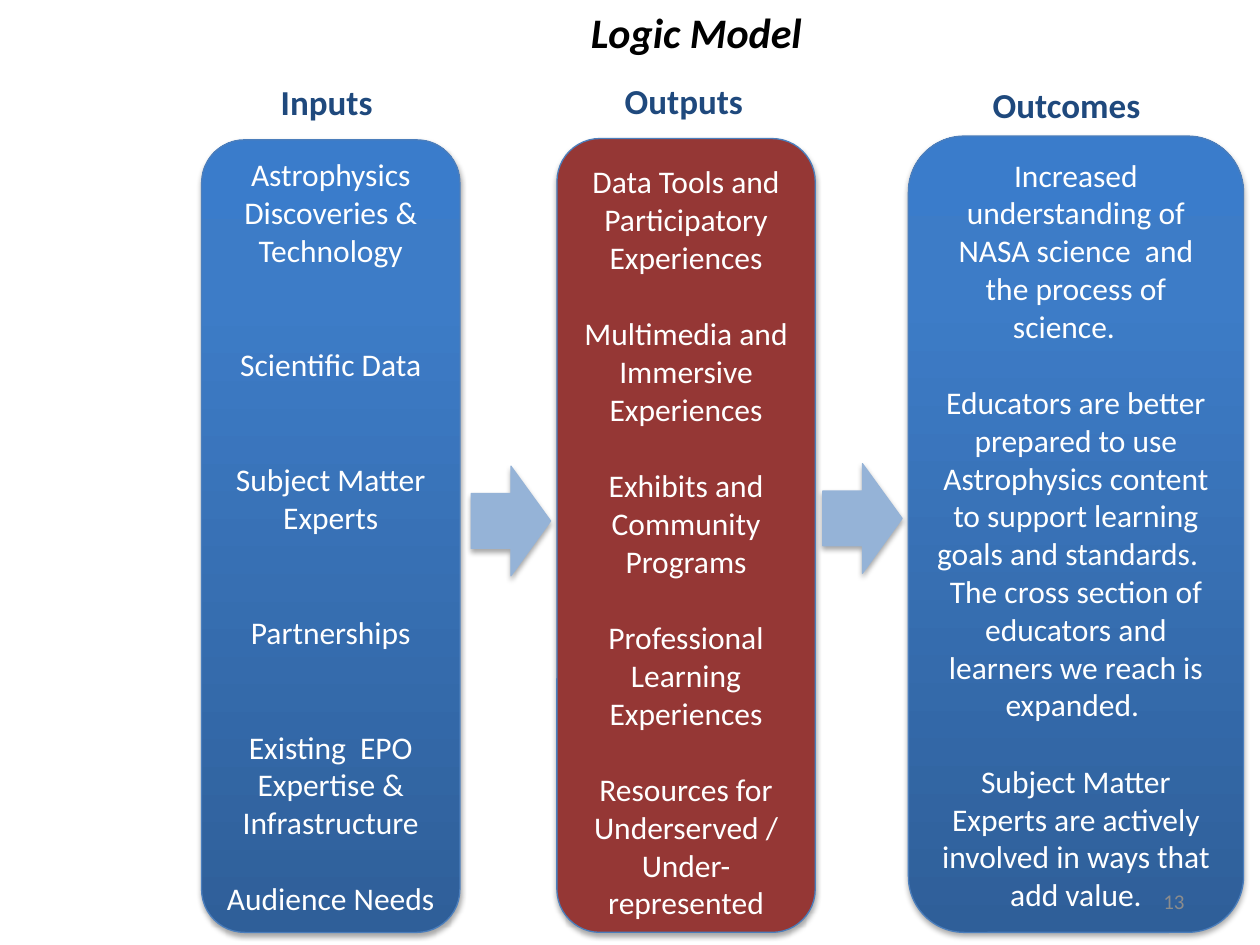
from copy import deepcopy
from dataclasses import dataclass

from lxml.etree import SubElement
from pptx import Presentation
from pptx.dml.color import RGBColor
from pptx.enum.shapes import MSO_SHAPE
from pptx.enum.text import MSO_ANCHOR, MSO_AUTO_SIZE, PP_ALIGN
from pptx.oxml.ns import qn
from pptx.util import Inches, Pt


@dataclass(frozen=True)
class Theme:
    font: str = "Calibri"
    white: str = "FFFFFF"
    black: str = "000000"
    navy: str = "1F497D"
    red: str = "953735"
    arrow: str = "95B3D7"
    outline: str = "4B7EBC"
    grey: str = "8C8C8C"
    blue_stops: tuple = ((0, "2F5F99"), (0.8, "3D7CC7"), (1, "3A7CCB"))
    title_size: int = 24
    heading_size: int = 20
    body_size: int = 18
    number_size: int = 12
    blank_line: int = 22


THEME = Theme()

# Each column: heading, heading box, panel box, fill (None = blue gradient),
# extra top inset, and items as (blank lines before, text)
COLUMNS = [
    ("Inputs", (2.13, 0.59, 0.94, 0.44), (1.6, 1.11, 2.05, 6.29), None, 0, [
        (0, "Astrophysics Discoveries & Technology"),
        (2, "Scientific Data"),
        (2, "Subject Matter Experts"),
        (2, "Partnerships"),
        (2, "Existing  EPO Expertise & Infrastructure"),
        (1, "Audience Needs"),
    ]),
    ("Outputs", (4.86, 0.58, 1.16, 0.44), (4.42, 1.1, 2.05, 6.3), THEME.red, 0.1, [
        (0, "Data Tools and Participatory Experiences"),
        (1, "Multimedia and Immersive Experiences"),
        (1, "Exhibits and Community Programs"),
        (1, "Professional Learning Experiences"),
        (1, "Resources for Underserved / Under-represented"),
    ]),
    ("Outcomes", (7.78, 0.61, 1.39, 0.44), (7.21, 1.08, 2.66, 6.32), None, 0, [
        (0, "Increased understanding of NASA science  and the process of science.\t"),
        (1, "Educators are better prepared to use Astrophysics content to support "
            "learning goals and standards.\t"),
        (0, "The cross section of educators and learners we reach is expanded. "),
        (1, "Subject Matter Experts are actively involved in ways that add value."),
    ]),
]


def inches(box):
    return [Inches(length) for length in box]


def write(paragraph, text, color, **font_format):
    run = paragraph.add_run()
    run.text = text
    run.font.color.rgb = RGBColor.from_string(color)
    for name, value in {"name": THEME.font, **font_format}.items():
        setattr(run.font, name, value)


def add_label(slide, box, text, color, **font_format):
    label = slide.shapes.add_textbox(*inches(box))
    label.text_frame.word_wrap = False
    label.text_frame.auto_size = MSO_AUTO_SIZE.SHAPE_TO_FIT_TEXT
    write(label.text_frame.paragraphs[0], text, color, **font_format)


def fill_blue(fill):
    """Vertical three-stop gradient, dark at the bottom."""
    fill.gradient()
    fill.gradient_angle = 90
    stop_list = fill._xPr.find(qn("a:gradFill")).find(qn("a:gsLst"))
    stop_list.append(deepcopy(stop_list[-1]))
    for stop, (position, color) in zip(fill.gradient_stops, THEME.blue_stops):
        stop.position = position
        stop.color.rgb = RGBColor.from_string(color)


def add_shadowed(slide, preset, box, fill_color, line_color):
    shape = slide.shapes.add_shape(preset, *inches(box))
    if fill_color:
        shape.fill.solid()
        shape.fill.fore_color.rgb = RGBColor.from_string(fill_color)
    else:
        fill_blue(shape.fill)
    shape.line.color.rgb = RGBColor.from_string(line_color)
    shape.line.width = Pt(0.75)
    # Soft shadow straight below
    shape.shadow.inherit = False
    effects = shape._element.spPr.find(qn("a:effectLst"))
    shadow = SubElement(effects, qn("a:outerShdw"), blurRad="40000", dist="23000",
                        dir="5400000", rotWithShape="0")
    color = SubElement(shadow, qn("a:srgbClr"), val=THEME.black)
    SubElement(color, qn("a:alpha"), val="35000")
    return shape


def add_panel(slide, box, fill_color, extra_top, items):
    panel = add_shadowed(slide, MSO_SHAPE.ROUNDED_RECTANGLE, box, fill_color, THEME.outline)
    frame = panel.text_frame
    frame.word_wrap = True
    frame.vertical_anchor = MSO_ANCHOR.MIDDLE
    frame.margin_top = Inches(0.05 + extra_top)
    for index, (blank_lines, text) in enumerate(items):
        paragraph = frame.add_paragraph() if index else frame.paragraphs[0]
        paragraph.alignment = PP_ALIGN.CENTER
        if blank_lines:
            paragraph.space_before = Pt(blank_lines * THEME.blank_line)
        write(paragraph, text, THEME.white, size=Pt(THEME.body_size))


def add_column(slide, heading, heading_box, box, fill_color, extra_top, items, has_arrow):
    add_panel(slide, box, fill_color, extra_top, items)
    if has_arrow:
        left, top = box[:2]
        add_shadowed(slide, MSO_SHAPE.RIGHT_ARROW, (left - 0.68, top + 2.6, 0.63, 0.87),
                     THEME.arrow, THEME.arrow)
    add_label(slide, heading_box, heading, THEME.navy, size=Pt(THEME.heading_size), bold=True)


def add_slide_number(slide, box, number):
    frame = slide.shapes.add_textbox(*inches(box)).text_frame
    frame.word_wrap = True
    frame.vertical_anchor = MSO_ANCHOR.MIDDLE
    frame.paragraphs[0].alignment = PP_ALIGN.RIGHT
    write(frame.paragraphs[0], number, THEME.grey, size=Pt(THEME.number_size))


def main():
    deck = Presentation()
    deck.slide_width, deck.slide_height = Inches(10), Inches(7.5)
    slide = deck.slides.add_slide(deck.slide_layouts[6])

    # Columns, each but the first with an arrow leading in
    for index, column in enumerate(COLUMNS):
        add_column(slide, *column, has_arrow=index > 0)

    # Title and slide number
    add_label(slide, (4.59, 0, 1.98, 0.5), "Logic Model", THEME.black,
              size=Pt(THEME.title_size), bold=True, italic=True)
    add_slide_number(slide, (7.17, 6.95, 2.33, 0.4), "13")

    deck.save("out.pptx")


if __name__ == "__main__":
    main()
